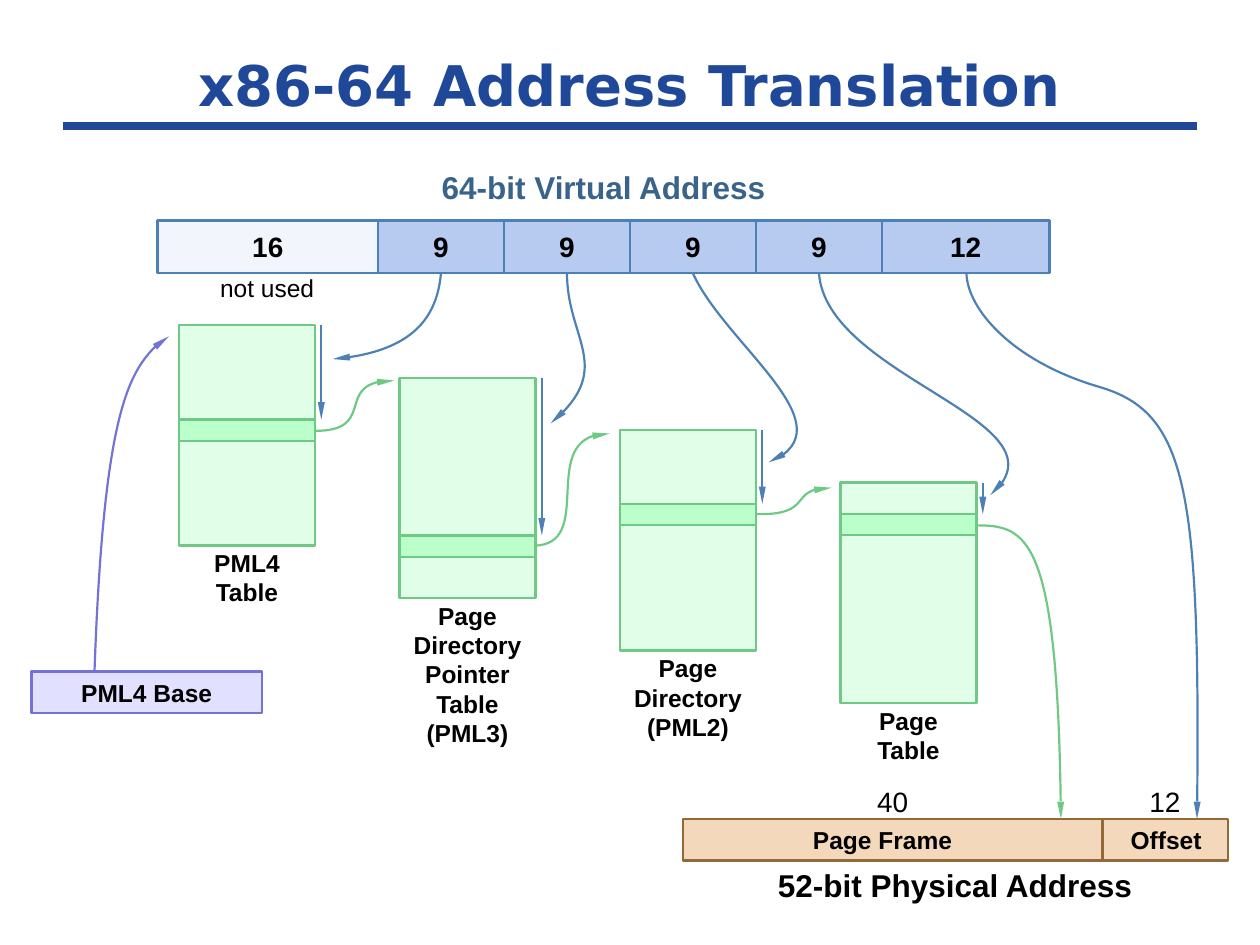
from lxml.etree import SubElement
from pptx import Presentation
from pptx.dml.color import RGBColor
from pptx.enum.shapes import MSO_CONNECTOR, MSO_SHAPE
from pptx.enum.text import MSO_ANCHOR, PP_ALIGN
from pptx.oxml.ns import qn
from pptx.util import Inches, Pt

TITLE_BLUE = RGBColor(0x1F, 0x48, 0x99)
HEADING_BLUE = RGBColor(0x3A, 0x63, 0x8C)
BLUE_LINE = RGBColor(0x4D, 0x81, 0xB5)
BLUE_FILL = RGBColor(0xB7, 0xCB, 0xF0)
UNUSED_FILL = RGBColor(0xF2, 0xF6, 0xFC)
GREEN_LINE = RGBColor(0x6F, 0xC9, 0x84)
TABLE_FILL = RGBColor(0xE1, 0xFF, 0xE8)
ENTRY_FILL = RGBColor(0xBB, 0xFF, 0xCB)
BROWN_LINE = RGBColor(0x94, 0x69, 0x3A)
BROWN_FILL = RGBColor(0xF3, 0xD8, 0xBB)
PURPLE_LINE = RGBColor(0x73, 0x73, 0xD5)
PURPLE_FILL = RGBColor(0xE1, 0xE1, 0xFF)
BLACK = RGBColor(0, 0, 0)

FIELD_TOP, FIELD_HEIGHT = 1.75, 0.42
FIELD_BOTTOM = FIELD_TOP + FIELD_HEIGHT
TABLE_WIDTH, TABLE_HEIGHT, ENTRY_HEIGHT = 1.08, 1.75, 0.17
FRAME_TOP, FRAME_HEIGHT = 6.5, 0.33

# Bits and width of each virtual address field
FIELDS = [(16, 1.75), (9, 1), (9, 1), (9, 1), (9, 1), (12, 1.33)]

# Name, entry top and label height of each table
TABLES = [
    ("PML4 Table", 3.33, 0.47),
    ("Page Directory Pointer Table\n(PML3)", 4.25, 1.16),
    ("Page Directory\n(PML2)", 4, 0.7),
    ("Page Table", 4.08, 0.47),
]

# Start point, then two control points and an end point per curve section
INDEX_CURVES = [
    [(3.5, FIELD_BOTTOM), (3.47, 2.5), (3.27, 2.8), (2.64, 2.85)],
    [(4.5, FIELD_BOTTOM), (4.5, 2.66), (4.89, 2.93), (4.37, 3.36)],
    [(5.5, FIELD_BOTTOM), (5.74, 2.7), (6.77, 3.4), (6.1, 3.67)],
    [(6.5, FIELD_BOTTOM), (6.56, 2.96), (8.54, 3.35), (7.86, 3.93)],
    [(7.67, FIELD_BOTTOM), (7.68, 2.46), (8.04, 2.87), (8.72, 3.07),
     (9.41, 3.27), (9.53, 3.87), (9.5, FRAME_TOP)],
]
ENTRY_CURVES = [
    [(2.5, 3.42), (2.96, 3.42), (2.64, 3.02), (3.13, 3.02)],
    [(4.25, 4.33), (4.7, 4.31), (4.25, 3.44), (4.84, 3.44)],
    [(6, 4.08), (6.4, 4.09), (6.27, 3.87), (6.6, 3.87)],
    [(7.75, 4.17), (8.15, 4.17), (8.4, 4.26), (8.42, FRAME_TOP)],
]
BASE_CURVE = [(0.75, 5.33), (0.82, 3.34), (1.07, 2.81), (1.34, 2.67)]


def add_box(shapes, left, top, width, height, fill, line):
    box = shapes.add_shape(MSO_SHAPE.RECTANGLE, Inches(left), Inches(top),
                           Inches(width), Inches(height))
    box.shadow.inherit = False
    box.fill.solid()
    box.fill.fore_color.rgb = fill
    box.line.color.rgb = line
    box.line.width = Pt(1.25)


def add_label(shapes, text, left, top, width, height, size=14, bold=True,
              color=BLACK, font="Arial", anchor=MSO_ANCHOR.TOP):
    label = shapes.add_textbox(Inches(left), Inches(top), Inches(width), Inches(height))
    frame = label.text_frame
    frame.word_wrap = True
    frame.vertical_anchor = anchor
    frame.margin_left = frame.margin_right = frame.margin_top = frame.margin_bottom = 0
    paragraph = frame.paragraphs[0]
    paragraph.alignment = PP_ALIGN.CENTER
    for number, part in enumerate(text.split("\n")):
        if number:
            paragraph.add_line_break()
        run = paragraph.add_run()
        run.text = part
        run.font.size = Pt(size)
        run.font.bold = bold
        run.font.name = font
        run.font.color.rgb = color


def add_arrowhead(arrow):
    outline = arrow.element.spPr.find(qn("a:ln"))
    SubElement(outline, qn("a:tailEnd"), type="triangle", w="sm", len="lg")


def add_line(shapes, start, end, color, width=1.25, arrow=True):
    connector = shapes.add_connector(MSO_CONNECTOR.STRAIGHT,
                                     *map(Inches, start), *map(Inches, end))
    connector.line.color.rgb = color
    connector.line.width = Pt(width)
    if arrow:
        add_arrowhead(connector)
    SubElement(connector.element.spPr, qn("a:effectLst"))


def bezier_point(section, t):
    weights = ((1 - t) ** 3, 3 * t * (1 - t) ** 2, 3 * t ** 2 * (1 - t), t ** 3)
    return tuple(Inches(sum(w * point[axis] for w, point in zip(weights, section)))
                 for axis in (0, 1))


def add_curve(shapes, points, color):
    sections = [points[i:i + 4] for i in range(0, len(points) - 1, 3)]
    # Points along the curve give the outline its true extent
    builder = shapes.build_freeform(*map(Inches, points[0]))
    builder.add_line_segments([bezier_point(section, step / 20)
                               for section in sections for step in range(1, 21)],
                              close=False)
    curve = builder.convert_to_shape()
    # Bézier sections take the place of the short segments
    outline = next(curve.element.iter(qn("a:path")))
    for segment in outline.findall(qn("a:lnTo")):
        outline.remove(segment)
    for section in sections:
        bezier = SubElement(outline, qn("a:cubicBezTo"))
        for x, y in section[1:]:
            SubElement(bezier, qn("a:pt"), x=str(Inches(x) - curve.left),
                       y=str(Inches(y) - curve.top))
    curve.shadow.inherit = False
    curve.fill.background()
    curve.line.color.rgb = color
    curve.line.width = Pt(1.25)
    add_arrowhead(curve)


def add_virtual_address(shapes):
    add_label(shapes, "64-bit Virtual Address", 1.33, 1.33, 6.92, 0.3, 18,
              color=HEADING_BLUE)
    left = 1.25
    for number, (bits, width) in enumerate(FIELDS):
        fill = BLUE_FILL if number else UNUSED_FILL
        add_box(shapes, left, FIELD_TOP, width, FIELD_HEIGHT, fill, BLUE_LINE)
        add_label(shapes, str(bits), left + 0.08, 1.82, width - 0.16, 0.27, 16)
        left += width
    add_label(shapes, "not used", 1.33, FIELD_BOTTOM, 1.58, 0.23, bold=False)


def add_tables(shapes):
    for level, (name, entry_top, label_height) in enumerate(TABLES):
        left = 1.42 + 1.75 * level
        top = 2.58 + 1.25 / 3 * level
        right = left + TABLE_WIDTH
        add_box(shapes, left, top, TABLE_WIDTH, TABLE_HEIGHT, TABLE_FILL, GREEN_LINE)
        add_box(shapes, left, entry_top, TABLE_WIDTH, ENTRY_HEIGHT, ENTRY_FILL, GREEN_LINE)
        add_label(shapes, name, left + 0.08, top + TABLE_HEIGHT + 0.02, 0.92, label_height)
        add_line(shapes, (right + 0.05, top), (right + 0.05, entry_top), BLUE_LINE)


def add_physical_address(shapes):
    for left, width in ((8.75, 1), (5.42, 3.33)):
        add_box(shapes, left, FRAME_TOP, width, FRAME_HEIGHT, BROWN_FILL, BROWN_LINE)
    add_label(shapes, "Page Frame", 6.42, 6.55, 1.17, 0.23)
    add_label(shapes, "Offset", 8.67, 6.55, 1.17, 0.23)
    add_label(shapes, "40", 5.5, 6.23, 3.17, 0.27, 16, bold=False)
    add_label(shapes, "12", 8.83, 6.23, 0.83, 0.27, 16, bold=False)
    add_label(shapes, "52-bit Physical Address", 5.58, 6.87, 4, 0.3, 18)


def add_base_register(shapes):
    register = shapes.add_group_shape().shapes
    add_box(register, 0.25, 5.33, 1.83, 0.33, PURPLE_FILL, PURPLE_LINE)
    add_label(register, "PML4 Base", 0.33, 5.38, 1.67, 0.24)


def main():
    deck = Presentation()
    deck.slide_width, deck.slide_height = Inches(10), Inches(7.5)
    shapes = deck.slides.add_slide(deck.slide_layouts[6]).shapes

    # Title and rule
    add_line(shapes, (0.5, 1), (9.5, 1), TITLE_BLUE, 4.5, arrow=False)
    add_label(shapes, "x86-64 Address Translation", 0.5, 0.33, 9, 0.67, 32,
              color=TITLE_BLUE, font="DejaVu Sans", anchor=MSO_ANCHOR.MIDDLE)

    # Addresses, tables and base register
    add_virtual_address(shapes)
    add_tables(shapes)
    add_physical_address(shapes)
    add_base_register(shapes)

    # Lookup path
    for color, curves in ((GREEN_LINE, ENTRY_CURVES), (BLUE_LINE, INDEX_CURVES),
                          (PURPLE_LINE, [BASE_CURVE])):
        for points in curves:
            add_curve(shapes, points, color)

    deck.save("out.pptx")


if __name__ == "__main__":
    main()
